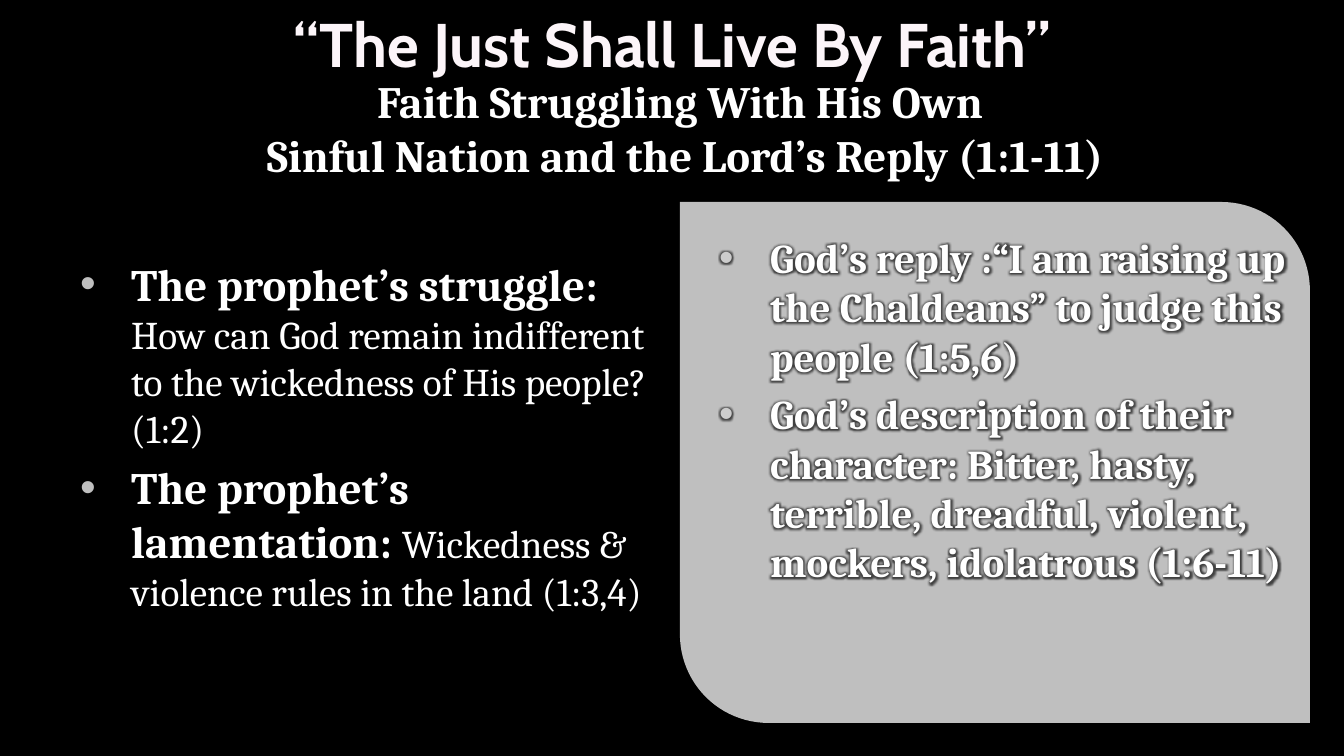
from lxml import etree
from pptx import Presentation
from pptx.dml.color import RGBColor
from pptx.enum.shapes import MSO_SHAPE as Shape
from pptx.enum.text import PP_ALIGN as Align
from pptx.oxml.ns import qn
from pptx.util import Pt

PX = 914400 / 134.4


def paint(target, color):
    target.solid()
    target.fore_color.rgb = RGBColor.from_string(color)


def add_paragraphs(box, paragraphs, font_name, color, bullet_color=None):
    left, top, width, height = [round(value * PX) for value in box]
    frame = slide.shapes.add_textbox(left, top, width, height).text_frame
    frame.word_wrap = True
    for index, runs in enumerate(paragraphs):
        paragraph = frame.paragraphs[0] if index == 0 else frame.add_paragraph()
        if bullet_color:
            properties = paragraph._p.get_or_add_pPr()
            properties.set("marL", str(round(51 * PX)))
            properties.set("indent", str(round(-51 * PX)))
            bullet = etree.SubElement(properties, qn("a:buClr"))
            etree.SubElement(bullet, qn("a:srgbClr"), val=bullet_color)
            etree.SubElement(properties, qn("a:buFont"), typeface="Arial")
            etree.SubElement(properties, qn("a:buChar"), char="•")
            if index:
                paragraph.space_before = Pt(4.5)
        else:
            paragraph.alignment = Align.CENTER
        paragraph.font.name = font_name
        paint(paragraph.font.fill, color)
        for text, size, bold in runs:
            run = paragraph.add_run()
            run.text = text
            run.font.size = Pt(size)
            run.font.bold = bold
    return frame


presentation = Presentation()
presentation.slide_width = round(1344 * PX)
presentation.slide_height = round(756 * PX)
slide = presentation.slides.add_slide(presentation.slide_layouts[6])
paint(slide.background.fill, "000000")

panels = [
    (42, 621, "000000", (0.17, 0)),
    (680, 630, "BFBFBF", (0, 0.17)),
]
for left, width, color, corners in panels:
    panel = slide.shapes.add_shape(
        Shape.ROUND_2_DIAG_RECTANGLE,
        round(left * PX), round(202 * PX), round(width * PX), round(521 * PX))
    panel.adjustments[0], panel.adjustments[1] = corners
    panel.shadow.inherit = False
    paint(panel.fill, color)
    if color == "000000":
        paint(panel.line.fill, color)
        panel.line.width = Pt(2)
    else:
        panel.line.fill.background()

add_paragraphs((168, -1, 1008, 89), [[("“The Just Shall Live By Faith”", 33, True)]],
               "Cabin", "FCF5F9")

subtitle = ["Faith Struggling With His Own ", "Sinful Nation and the Lord’s Reply (1:1-11)"]
add_paragraphs((67, 67, 1236, 122), [[(line, 24, True)] for line in subtitle],
               "Cambria", "FFFFFF")

prophet_points = [
    ("The prophet’s struggle:  ",
     "How can God remain indifferent to the wickedness of His people? (1:2)"),
    ("The prophet’s lamentation: ", "Wickedness & violence rules in the land (1:3,4)"),
]
add_paragraphs((67, 250, 597, 477),
               [[(lead, 24, True), (detail, 21, False)] for lead, detail in prophet_points],
               "Cambria", "FFFFFF", "BFBFBF")

reply_points = [
    "God’s reply :“I am raising up the Chaldeans” to judge this people (1:5,6)",
    "God’s description of their character: Bitter, hasty, terrible, dreadful, violent, "
    "mockers, idolatrous (1:6-11)",
]
reply = add_paragraphs((706, 226, 605, 470), [[(point, 22, True)] for point in reply_points],
                       "Cambria", "FFFFFF", "CCCCCC")
for paragraph in reply.paragraphs:
    for run in paragraph.runs:
        effects = etree.SubElement(run.font._element, qn("a:effectLst"))
        glow = etree.SubElement(effects, qn("a:glow"), rad=str(Pt(4)))
        etree.SubElement(glow, qn("a:srgbClr"), val="404040")

presentation.save("out.pptx")
